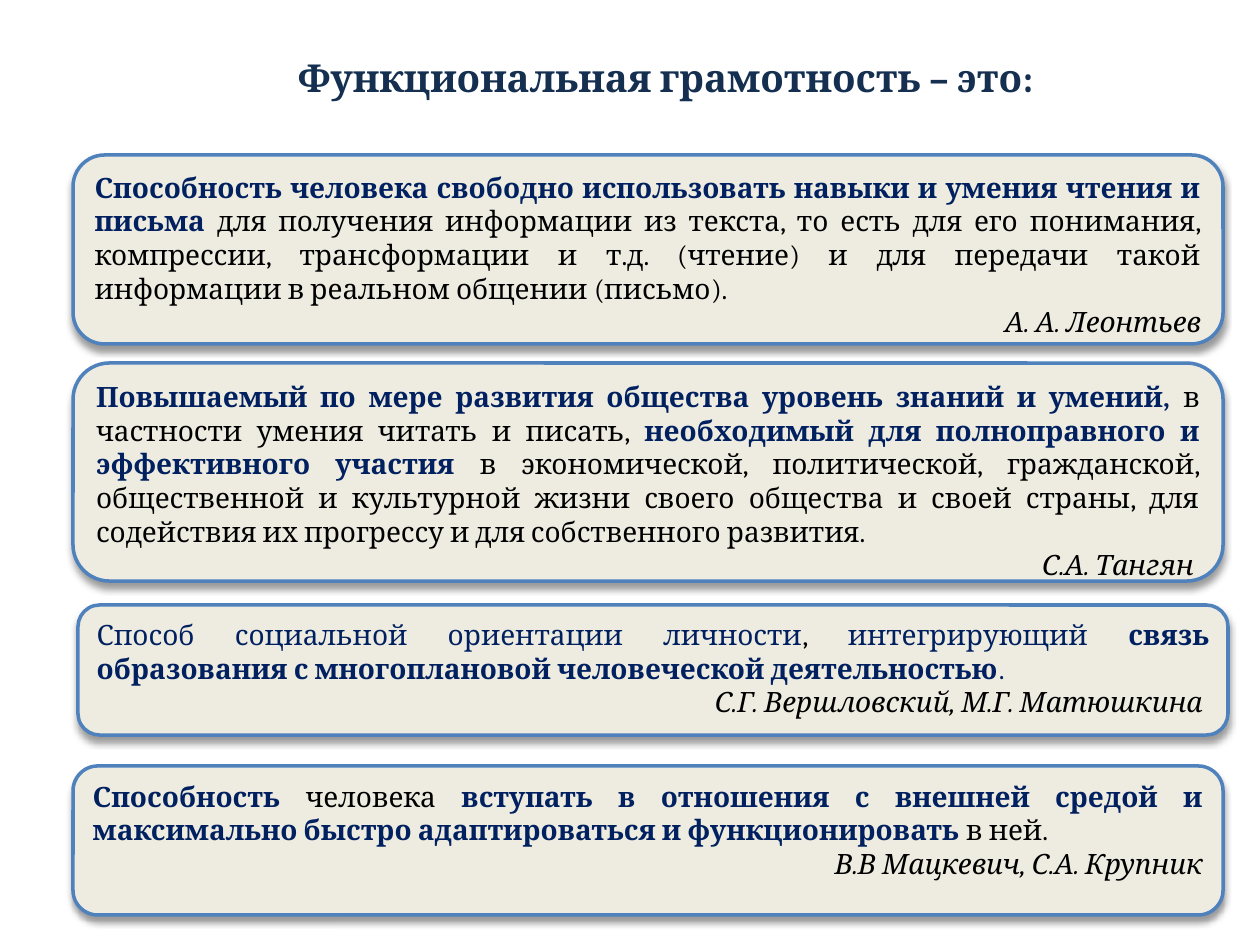
from lxml import etree
from pptx import Presentation
from pptx.dml.color import RGBColor
from pptx.enum.shapes import MSO_SHAPE
from pptx.enum.text import MSO_ANCHOR, PP_ALIGN
from pptx.oxml.ns import qn
from pptx.util import Emu, Pt

ROUNDED = MSO_SHAPE.ROUNDED_RECTANGLE
TOP, MIDDLE = MSO_ANCHOR.TOP, MSO_ANCHOR.MIDDLE
CENTER, JUSTIFY, RIGHT = PP_ALIGN.CENTER, PP_ALIGN.JUSTIFY, PP_ALIGN.RIGHT

TITLE_BLUE = RGBColor(0x14, 0x2F, 0x50)
NAVY = RGBColor(0x00, 0x20, 0x60)
BLACK = RGBColor(0x00, 0x00, 0x00)
CREAM = RGBColor(0xEE, 0xEC, 0xE1)
BORDER_BLUE = RGBColor(0x4F, 0x81, 0xBD)

EMU_PER_PX = 914400 / 126
FONT = {"name": "Cambria", "size": Pt(16), "bold": False, "italic": False}
HEADING = FONT | {"size": Pt(22), "bold": True}
PLAIN = FONT
KEY = FONT | {"bold": True}
AUTHOR = FONT | {"italic": True}

TITLE_BOX = (222, 10, 887, 135)
DEFINITIONS = [
    ((73, 155, 1150, 189), [
        ("Способность человека свободно использовать навыки и умения чтения и письма", KEY, NAVY),
        (" для получения информации из текста, то есть для его понимания, компрессии, "
         "трансформации и т.д. (чтение) и для передачи такой информации в реальном "
         "общении (письмо). ", PLAIN, BLACK),
    ], "А. А. Леонтьев"),
    ((73, 363, 1150, 218), [
        ("Повышаемый по мере развития общества уровень знаний и умений, ", KEY, NAVY),
        ("в частности умения читать и писать, ", PLAIN, BLACK),
        ("необходимый для полноправного и эффективного участия ", KEY, NAVY),
        ("в экономической, политической, гражданской, общественной и культурной жизни "
         "своего общества и своей страны, для содействия их прогрессу и для собственного "
         "развития. ", PLAIN, BLACK),
    ], "С.А. Тангян "),
    ((78, 605, 1150, 130), [
        ("Способ социальной ориентации личности", PLAIN, NAVY),
        (", ", PLAIN, BLACK),
        ("интегрирующий ", PLAIN, NAVY),
        ("связь образования с многоплановой человеческой деятельностью", KEY, NAVY),
        (". ", PLAIN, NAVY),
    ], "С.Г. Вершловский, М.Г. Матюшкина "),
    ((73, 766, 1150, 149), [
        ("Способность ", KEY, NAVY),
        ("человека ", PLAIN, BLACK),
        ("вступать в отношения с внешней средой и максимально быстро адаптироваться "
         "и функционировать ", KEY, NAVY),
        ("в ней. ", PLAIN, BLACK),
    ], "В.В Мацкевич, С.А. Крупник"),
]


def px(length):
    return Emu(round(length * EMU_PER_PX))


def write_paragraph(paragraph, phrases, alignment):
    paragraph.alignment = alignment
    for text, style, color in phrases:
        run = paragraph.add_run()
        run.text = text
        for attribute, value in style.items():
            setattr(run.font, attribute, value)
        run.font.color.rgb = color


def add_drop_shadow(card):
    card.shadow.inherit = False
    effects = card._element.spPr.find(qn("a:effectLst"))
    shadow = etree.SubElement(effects, qn("a:outerShdw"), blurRad=str(Pt(4)),
                              dist=str(Pt(3)), dir="5400000", rotWithShape="0")
    color = etree.SubElement(shadow, qn("a:srgbClr"), val=str(BLACK))
    etree.SubElement(color, qn("a:alpha"), val="40000")


def add_title(slide, box):
    frame = slide.shapes.add_textbox(*map(px, box)).text_frame
    frame.word_wrap = True
    frame.vertical_anchor = MIDDLE
    heading = [("Функциональная грамотность – это:", HEADING, TITLE_BLUE)]
    write_paragraph(frame.paragraphs[0], heading, CENTER)


def add_definition(slide, box, phrases, author):
    card = slide.shapes.add_shape(ROUNDED, *map(px, box))
    card.fill.solid()
    card.fill.fore_color.rgb = CREAM
    card.line.color.rgb = BORDER_BLUE
    card.line.width = Pt(2)
    add_drop_shadow(card)
    frame = card.text_frame
    frame.word_wrap = True
    frame.vertical_anchor = TOP
    write_paragraph(frame.paragraphs[0], phrases, JUSTIFY)
    write_paragraph(frame.add_paragraph(), [(author, AUTHOR, BLACK)], RIGHT)


def main():
    presentation = Presentation()
    presentation.slide_width = px(1260)
    presentation.slide_height = px(945)
    slide = presentation.slides.add_slide(presentation.slide_layouts[6])
    add_title(slide, TITLE_BOX)
    for box, phrases, author in DEFINITIONS:
        add_definition(slide, box, phrases, author)
    presentation.save("out.pptx")


if __name__ == "__main__":
    main()
